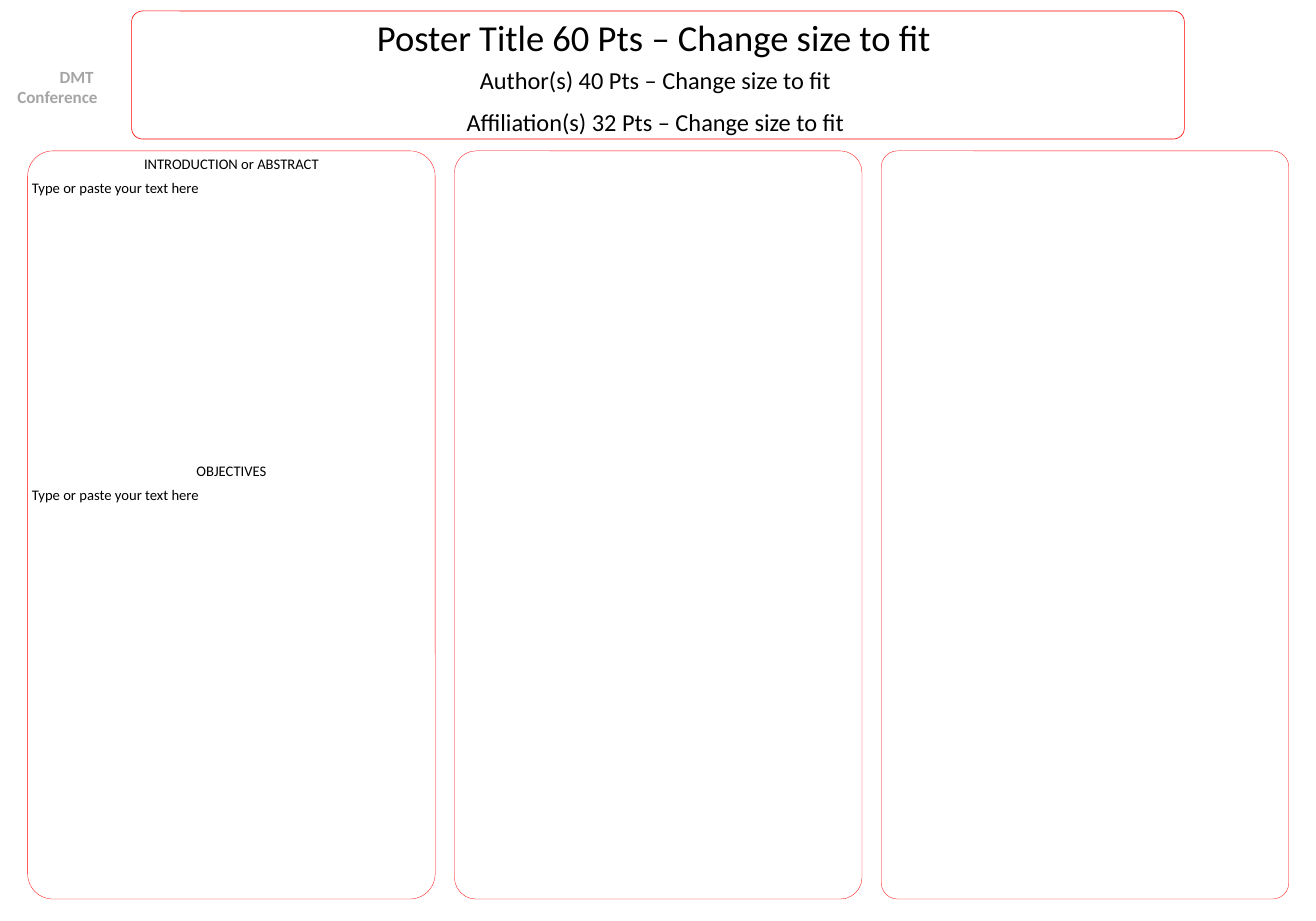
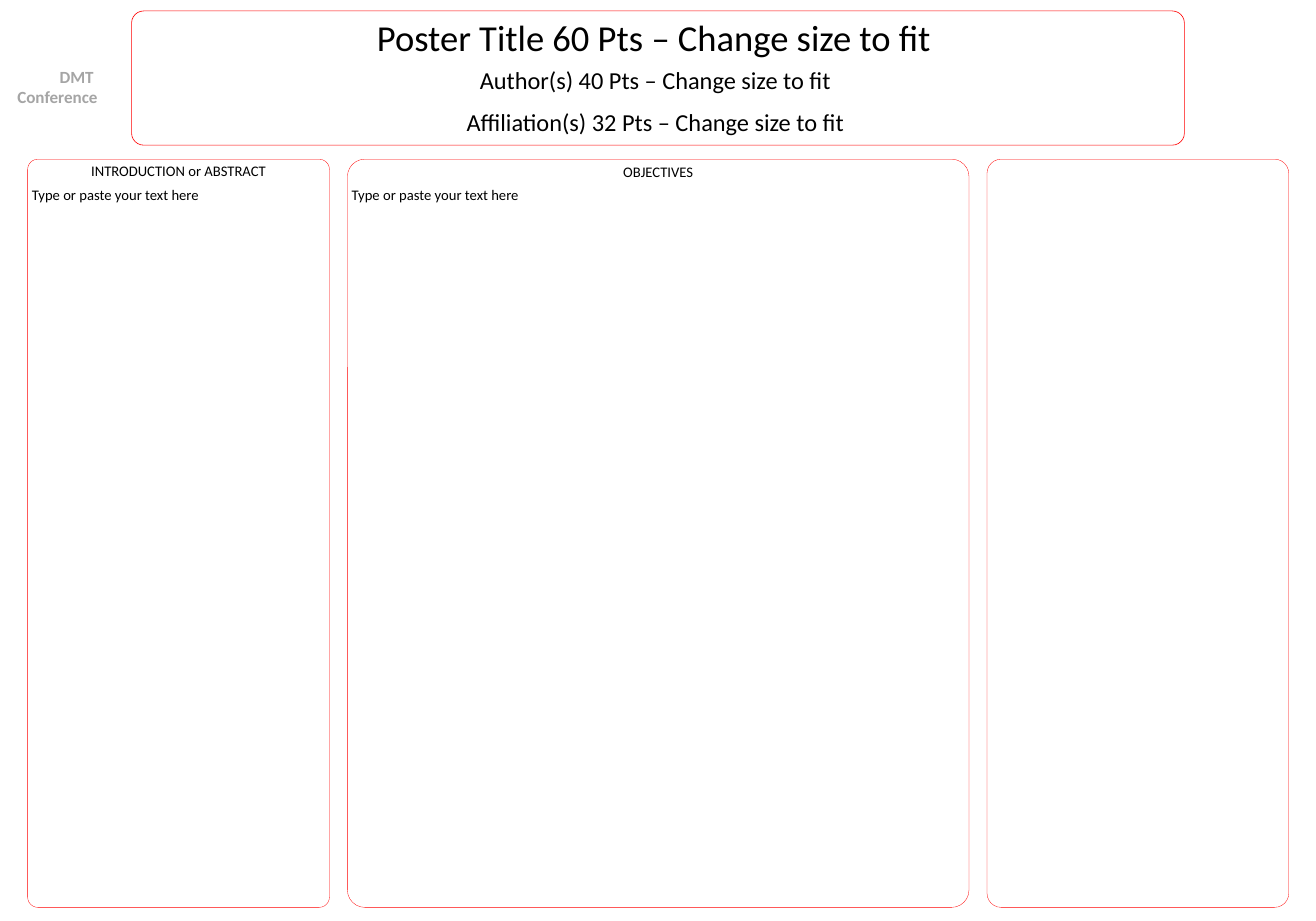
from pptx import Presentation
from pptx.dml.color import RGBColor
from pptx.enum.shapes import MSO_SHAPE as Shape
from pptx.enum.text import MSO_ANCHOR as Anchor, MSO_AUTO_SIZE as AutoSize, PP_ALIGN as Align
from pptx.util import Pt

PX = 9144
RED, WHITE, BLACK, GREY = "FF0000", "FFFFFF", "000000", "A5A5A5"
FONT = "Calibri"
HEADER_LEFT, HEADER_WIDTH = 300, 2400
LEFT, RIGHT = 63, 2938
COLUMN_HEIGHT = 1706
PROMPT_OFFSET = 54

POSTERS = [
    {
        "header": (292, 0.086),
        "top": 344,
        "columns": [(929, 0.062), (929, 0.053), (929, 0.04)],
        "sections": [(0, 349, "INTRODUCTION or ABSTRACT"), (0, 1048, "OBJECTIVES")],
    },
    {
        "header": (306, 0.09),
        "top": 363,
        "columns": [(688, 0.034), (1417, 0.028), (688, 0.047)],
        "sections": [(0, 364, "INTRODUCTION or ABSTRACT"), (1, 366, "OBJECTIVES")],
    },
]


def add_panel(slide, box, radius, weight, fill=None):
    shape = slide.shapes.add_shape(Shape.ROUNDED_RECTANGLE, *[value * PX for value in box])
    shape.adjustments[0] = radius
    shape.shadow.inherit = False
    if fill:
        shape.fill.solid()
        shape.fill.fore_color.rgb = RGBColor.from_string(fill)
    else:
        shape.fill.background()
    shape.line.color.rgb = RGBColor.from_string(RED)
    shape.line.width = Pt(weight)


def write(shape, box, lines, size, align=Align.CENTER, color=BLACK, bold=False, wrap=True):
    shape.left, shape.top, shape.width, shape.height = [value * PX for value in box]
    frame = shape.text_frame
    frame.word_wrap = wrap
    frame.auto_size = AutoSize.SHAPE_TO_FIT_TEXT
    frame.vertical_anchor = Anchor.TOP
    for index, line in enumerate(lines):
        paragraph = frame.add_paragraph() if index else frame.paragraphs[0]
        paragraph.alignment = align
        run = paragraph.add_run()
        run.text = line
        run.font.name = FONT
        run.font.size = Pt(size)
        run.font.bold = bold
        run.font.color.rgb = RGBColor.from_string(color)


presentation = Presentation()
presentation.slide_width = 3000 * PX
presentation.slide_height = 2100 * PX
title_only = presentation.slide_layouts[5]

for poster in POSTERS:
    slide = presentation.slides.add_slide(title_only)
    shapes = slide.shapes

    header_height, header_radius = poster["header"]
    add_panel(slide, (HEADER_LEFT, 25, HEADER_WIDTH, header_height), header_radius, 1)

    widths = [width for width, radius in poster["columns"]]
    gap = (RIGHT - LEFT - sum(widths)) // (len(widths) - 1)
    lefts = [LEFT + sum(widths[:index]) + gap * index for index in range(len(widths))]
    for left, (width, radius) in zip(lefts, poster["columns"]):
        add_panel(slide, (left, poster["top"], width, COLUMN_HEIGHT), radius, 0.5, WHITE)

    write(shapes.title, (HEADER_LEFT, 29, HEADER_WIDTH, 111),
          ["Poster Title 60 Pts – Change size to fit "], 60)
    for top, line in [(143, "Author(s) 40 Pts – Change size to fit "),
                      (240, "Affiliation(s) 32 Pts – Change size to fit ")]:
        write(shapes.add_textbox(0, 0, 0, 0), (HEADER_LEFT, top, HEADER_WIDTH, 77), [line], 40)

    for column, top, heading in poster["sections"]:
        left, width = lefts[column], widths[column]
        write(shapes.add_textbox(0, 0, 0, 0), (left, top, width, 50), [heading], 24)
        write(shapes.add_textbox(0, 0, 0, 0), (left, top + PROMPT_OFFSET, width, 50),
              ["Type or paste your text here"], 24, Align.LEFT)

    write(shapes.add_textbox(0, 0, 0, 0), (27, 146, 205, 104), ["DMT ", "Conference"], 28,
          Align.RIGHT, GREY, bold=True, wrap=False)

presentation.save("out.pptx")
